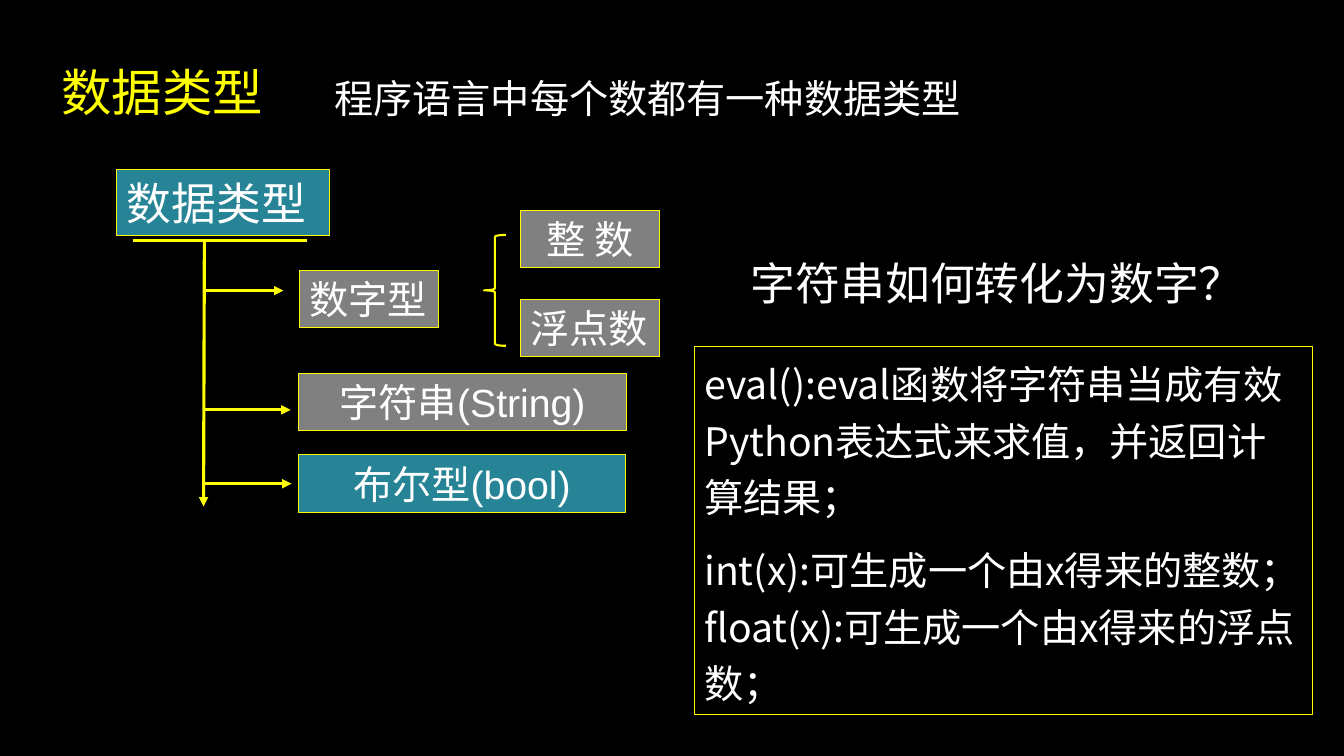
from pptx import Presentation
from pptx.dml.color import RGBColor
from pptx.enum.shapes import MSO_CONNECTOR, MSO_SHAPE
from pptx.enum.text import MSO_ANCHOR, PP_ALIGN
from pptx.oxml.ns import qn
from pptx.util import Pt
from lxml.etree import SubElement

BLACK = RGBColor(0x00, 0x00, 0x00)
WHITE = RGBColor(0xFF, 0xFF, 0xFF)
YELLOW = RGBColor(0xFF, 0xFF, 0x00)
TEAL = RGBColor(0x26, 0x84, 0x96)
GRAY = RGBColor(0x80, 0x80, 0x80)
CJK = "Noto Sans CJK SC"

prs = Presentation()
prs.slide_width, prs.slide_height = Pt(960), Pt(540)
slide = prs.slides.add_slide(prs.slide_layouts[6])
slide.background.fill.solid()
slide.background.fill.fore_color.rgb = BLACK


def write(shape, lines, size, font, color=WHITE, align=PP_ALIGN.LEFT, wrap=True):
    frame = shape.text_frame
    frame.word_wrap = wrap
    frame.text = "\n".join(lines)
    for paragraph in frame.paragraphs:
        paragraph.alignment = align
        paragraph.font.size = Pt(size)
        paragraph.font.name = font
        paragraph.font.color.rgb = color
    return frame


def outlined(kind, left, top, width, height, weight, fill=None):
    shape = slide.shapes.add_shape(kind, Pt(left), Pt(top), Pt(width), Pt(height))
    shape.shadow.inherit = False
    shape.line.color.rgb = YELLOW
    shape.line.width = Pt(weight)
    if fill is None:
        shape.fill.background()
    else:
        shape.fill.solid()
        shape.fill.fore_color.rgb = fill
    return shape


# Headings
for text, left, top, width, height, size, color, wrap in [
    ("数据类型", 36.7, 40.3, 160, 51, 36, YELLOW, False),
    ("程序语言中每个数都有一种数据类型", 231.8, 49.7, 529, 41, 28, WHITE, True),
    ("字符串如何转化为数字？", 529.2, 179.3, 375, 46, 32, WHITE, True),
]:
    heading = slide.shapes.add_textbox(Pt(left), Pt(top), Pt(width), Pt(height))
    write(heading, [text], size, CJK, color, wrap=wrap)

# Type boxes
for text, left, top, width, height, size, fill, align, wrap in [
    ("数据类型", 83.5, 121.3, 152, 46.8, 32, TEAL, PP_ALIGN.LEFT, True),
    ("数字型", 213.8, 193, 99.4, 41, 28, GRAY, PP_ALIGN.LEFT, False),
    ("整 数", 371.9, 150.3, 99.4, 41, 28, GRAY, PP_ALIGN.CENTER, True),
    ("浮点数", 371.9, 213.8, 99.4, 41, 28, GRAY, PP_ALIGN.LEFT, False),
    ("字符串(String)", 213.1, 266.7, 234.7, 41, 28, GRAY, PP_ALIGN.CENTER, True),
    ("布尔型(bool)", 213.1, 324.8, 233.6, 41, 28, TEAL, PP_ALIGN.CENTER, True),
]:
    type_box = outlined(MSO_SHAPE.RECTANGLE, left, top, width, height, 0.75, fill)
    write(type_box, [text], size, "Arial", align=align, wrap=wrap)

# Brace from the numeric type to its two kinds
outlined(MSO_SHAPE.LEFT_BRACE, 345.6, 167.8, 15.8, 79.2, 1.5)

# Tree: top bar, trunk and branches
for x1, y1, x2, y2, arrow in [
    (95, 172.1, 219.6, 172.1, False),
    (146, 172.1, 145.4, 361.8, True),
    (146, 207.6, 202.5, 207.6, True),
    (146, 292.8, 207.6, 292.8, True),
    (146, 345.5, 208.3, 345.5, True),
]:
    branch = slide.shapes.add_connector(
        MSO_CONNECTOR.STRAIGHT, Pt(x1), Pt(y1), Pt(x2), Pt(y2))
    branch.line.color.rgb = YELLOW
    branch.line.width = Pt(2.25)
    if arrow:
        SubElement(branch.line._get_or_add_ln(), qn("a:tailEnd"), type="triangle")
    SubElement(branch._element.spPr, qn("a:effectLst"))

# Conversion functions
conversions = outlined(MSO_SHAPE.RECTANGLE, 496.1, 247.2, 441.4, 263.3, 0.75)
conversion_text = write(conversions, [
    "eval():eval函数将字符串当成有效Python表达式来求值，并返回计算结果；",
    "int(x):可生成一个由x得来的整数；",
    "float(x):可生成一个由x得来的浮点数；",
], 28, CJK)
conversion_text.vertical_anchor = MSO_ANCHOR.TOP
for paragraph in conversion_text.paragraphs:
    paragraph.line_spacing = 1.2
conversion_text.paragraphs[1].space_before = Pt(12)

prs.save("out.pptx")
